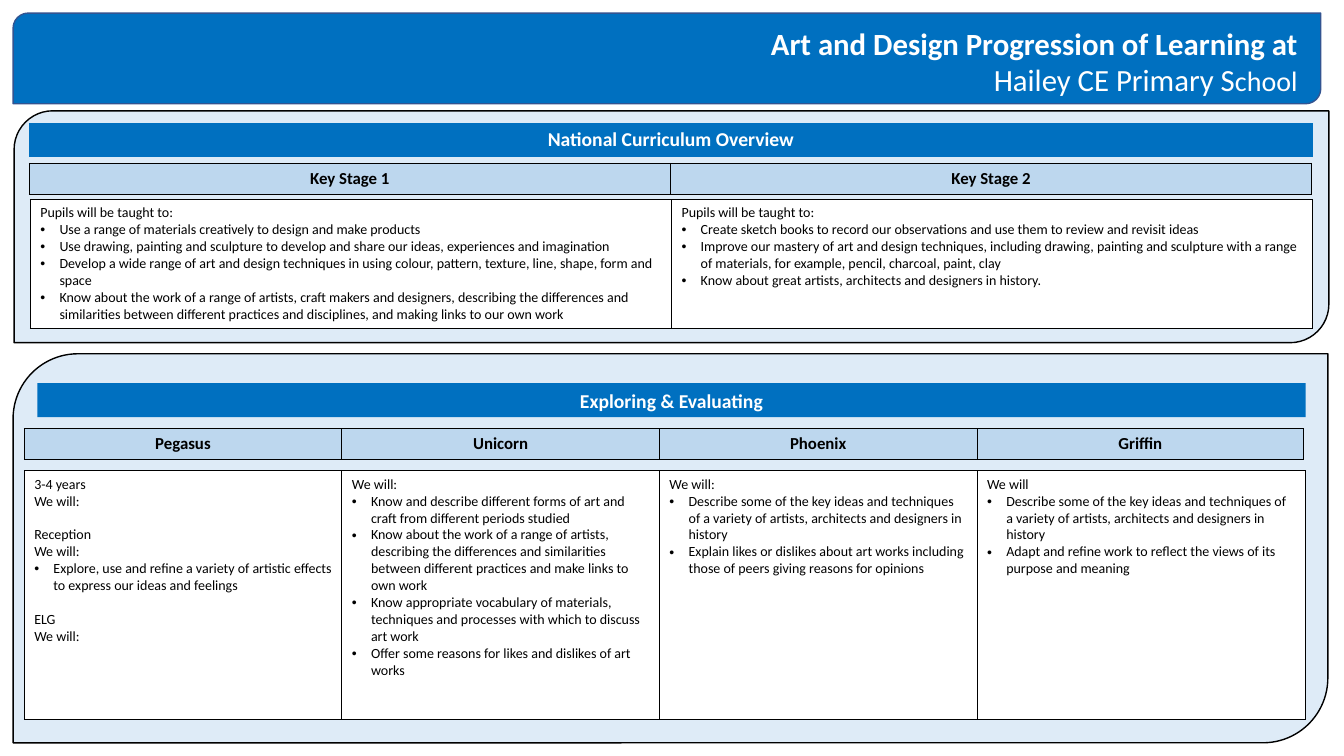
from dataclasses import dataclass

from lxml import etree
from pptx import Presentation
from pptx import util as u
from pptx.dml.color import RGBColor
from pptx.enum import shapes, text
from pptx.oxml.ns import qn

BLUE = RGBColor(0x00, 0x70, 0xC0)
BAR_EDGE = RGBColor(0x32, 0x54, 0x91)
PALE = RGBColor(0xDE, 0xEB, 0xF7)
HEADER = RGBColor(0xBD, 0xD7, 0xEE)
WHITE = RGBColor(0xFF, 0xFF, 0xFF)
BLACK = RGBColor(0x00, 0x00, 0x00)
FONT = "Calibri"
PLAIN_STYLE = "{2D5ABB26-0587-4C30-8999-92F81FD0307C}"
INDENT = u.Inches(0.19)
DIAGONAL = shapes.MSO_SHAPE.ROUND_2_DIAG_RECTANGLE


@dataclass
class Box:
    left: float
    top: float
    width: float
    height: float

    def inches(self) -> tuple:
        return tuple(u.Inches(v) for v in (self.left, self.top, self.width, self.height))


@dataclass
class Line:
    words: str
    bullet: bool = False
    gap: float = 0  # points above the line


@dataclass
class Grid:
    box: Box
    cols: list[float]
    cells: list[list[Line]]
    fill: RGBColor
    color: RGBColor = BLACK
    size: int = 10
    heading: bool = False
    border: bool = True


def taught(intro: str, *points: str) -> list[Line]:
    return [Line(intro)] + [Line(point, bullet=True) for point in points]


def add_run(p, words: str, size: int, color: RGBColor, bold: bool = False) -> None:
    r = p.add_run()
    r.text = words
    r.font.name, r.font.size, r.font.bold = FONT, u.Pt(size), bold
    r.font.color.rgb = color


def add_bullet(p) -> None:
    props = p._p.get_or_add_pPr()
    props.set("marL", str(INDENT))
    props.set("indent", str(-INDENT))
    etree.SubElement(props, qn("a:buFont"), typeface="Arial")
    etree.SubElement(props, qn("a:buChar"), char="•")


def add_borders(cell) -> None:
    props = cell._tc.get_or_add_tcPr()
    for i, side in enumerate(("a:lnL", "a:lnR", "a:lnT", "a:lnB")):
        ln = etree.Element(qn(side), w=str(u.Pt(0.5)))
        fill = etree.SubElement(ln, qn("a:solidFill"))
        etree.SubElement(fill, qn("a:srgbClr"), val=str(BLACK))
        props.insert(i, ln)


def add_block(s, kind, box: Box, fill: RGBColor, edge: RGBColor | None = None):
    sp = s.shapes.add_shape(kind, *box.inches())
    sp.shadow.inherit = False
    sp.fill.solid()
    sp.fill.fore_color.rgb = fill
    if edge is None:
        sp.line.fill.background()
    else:
        sp.line.color.rgb = edge
        sp.line.width = u.Pt(1)
    return sp


def add_grid(s, grid: Grid) -> None:
    table = s.shapes.add_table(1, len(grid.cols), *grid.box.inches()).table
    table.first_row = table.horz_banding = False
    table._tbl.tblPr.find(qn("a:tableStyleId")).text = PLAIN_STYLE
    for i, (width, lines) in enumerate(zip(grid.cols, grid.cells)):
        table.columns[i].width = u.Inches(width)
        cell = table.cell(0, i)
        cell.fill.solid()
        cell.fill.fore_color.rgb = grid.fill
        if grid.border:
            add_borders(cell)
        tf = cell.text_frame
        for n, line in enumerate(lines):
            p = tf.add_paragraph() if n else tf.paragraphs[0]
            if grid.heading:
                p.alignment = text.PP_ALIGN.CENTER
            if line.gap:
                p.space_before = u.Pt(line.gap)
            if line.bullet:
                add_bullet(p)
            add_run(p, line.words, grid.size, grid.color, grid.heading)


def add_title(s, bar) -> None:
    sp = s.shapes.title
    bar.element.addnext(sp.element)
    sp.left, sp.top, sp.width, sp.height = Box(6.42, 0.19, 6.55, 0.84).inches()
    tf = sp.text_frame
    tf.word_wrap = True
    tf.auto_size = text.MSO_AUTO_SIZE.NONE
    tf.vertical_anchor = text.MSO_ANCHOR.TOP
    first, second = tf.paragraphs[0], tf.add_paragraph()
    for p in (first, second):
        p.alignment = text.PP_ALIGN.RIGHT
        p.line_spacing = 1.0
    add_run(first, "Art and Design Progression of Learning at", 22, WHITE, True)
    add_run(second, "Hailey CE Primary S", 22, WHITE)
    add_run(second, "chool", 20, WHITE)


# Curriculum overview tables
STAGE_COLS = [6.36, 6.36]
OVERVIEW = [
    Grid(Box(0.29, 1.22, 12.73, 0.33), [12.73], [[Line("National Curriculum Overview")]],
         BLUE, WHITE, 14, heading=True, border=False),
    Grid(Box(0.29, 1.62, 12.73, 0.3), STAGE_COLS, [[Line("Key Stage 1")], [Line("Key Stage 2")]],
         HEADER, size=12, heading=True),
    Grid(Box(0.3, 1.98, 12.73, 1.27), STAGE_COLS, [
        taught("Pupils will be taught to:",
               "Use a range of materials creatively to design and make products",
               "Use drawing, painting and sculpture to develop and share our ideas, experiences and imagination",
               "Develop a wide range of art and design techniques in using colour, pattern, texture, line, "
               "shape, form and space",
               "Know about the work of a range of artists, craft makers and designers, describing the "
               "differences and similarities between different practices and disciplines, and making links "
               "to our own work"),
        taught("Pupils will be taught to:",
               "Create sketch books to record our observations and use them to review and revisit ideas",
               "Improve our mastery of art and design techniques, including drawing, painting and sculpture "
               "with a range of materials, for example, pencil, charcoal, paint, clay",
               "Know about great artists, architects and designers in history."),
    ], WHITE),
]

# Class tables
KEY_IDEAS = ("Describe some of the key ideas and techniques of a variety of artists, "
             "architects and designers in history")
CLASSES = [
    Grid(Box(0.24, 4.25, 12.69, 0.3), [3.15, 3.15, 3.15, 3.24],
         [[Line(name)] for name in ("Pegasus", "Unicorn", "Phoenix", "Griffin")],
         HEADER, size=12, heading=True),
    Grid(Box(0.24, 4.67, 12.71, 2.47), [3.15, 3.15, 3.15, 3.26], [
        [Line("3-4 years"), Line("We will:"), Line("Reception", gap=12)]
        + taught("We will:",
                 "Explore, use and refine a variety of artistic effects to express our ideas and feelings")
        + [Line("ELG", gap=12), Line("We will:")],
        taught("We will:",
               "Know and describe different forms of art and craft from different periods studied",
               "Know about the work of a range of artists, describing the differences and similarities "
               "between different practices and make links to own work",
               "Know appropriate vocabulary of materials, techniques and processes with which to discuss "
               "art work",
               "Offer some reasons for likes and dislikes of art works"),
        taught("We will:", KEY_IDEAS,
               "Explain likes or dislikes about art works including those of peers giving reasons for "
               "opinions"),
        taught("We will", KEY_IDEAS,
               "Adapt and refine work to reflect the views of its purpose and meaning"),
    ], WHITE),
]


def main() -> None:
    prs = Presentation()
    prs.slide_width, prs.slide_height = u.Inches(13.33), u.Inches(7.5)
    s = prs.slides.add_slide(prs.slide_layouts[5])

    # Title bar
    add_title(s, add_block(s, DIAGONAL, Box(0.13, 0.13, 12.97, 0.9), BLUE, BAR_EDGE))

    # Panels
    for box in (Box(0.14, 1.1, 13.04, 2.3), Box(0.13, 3.51, 13.04, 3.86)):
        add_block(s, DIAGONAL, box, PALE, BLACK)

    # Banner of the lower panel
    banner = add_block(s, shapes.MSO_SHAPE.RECTANGLE, Box(0.37, 3.8, 12.58, 0.34), BLUE)
    p = banner.text_frame.paragraphs[0]
    p.alignment = text.PP_ALIGN.CENTER
    add_run(p, "Exploring & Evaluating", 14, WHITE, True)

    # Tables
    for grid in OVERVIEW + CLASSES:
        add_grid(s, grid)

    prs.save("out.pptx")


if __name__ == "__main__":
    main()
